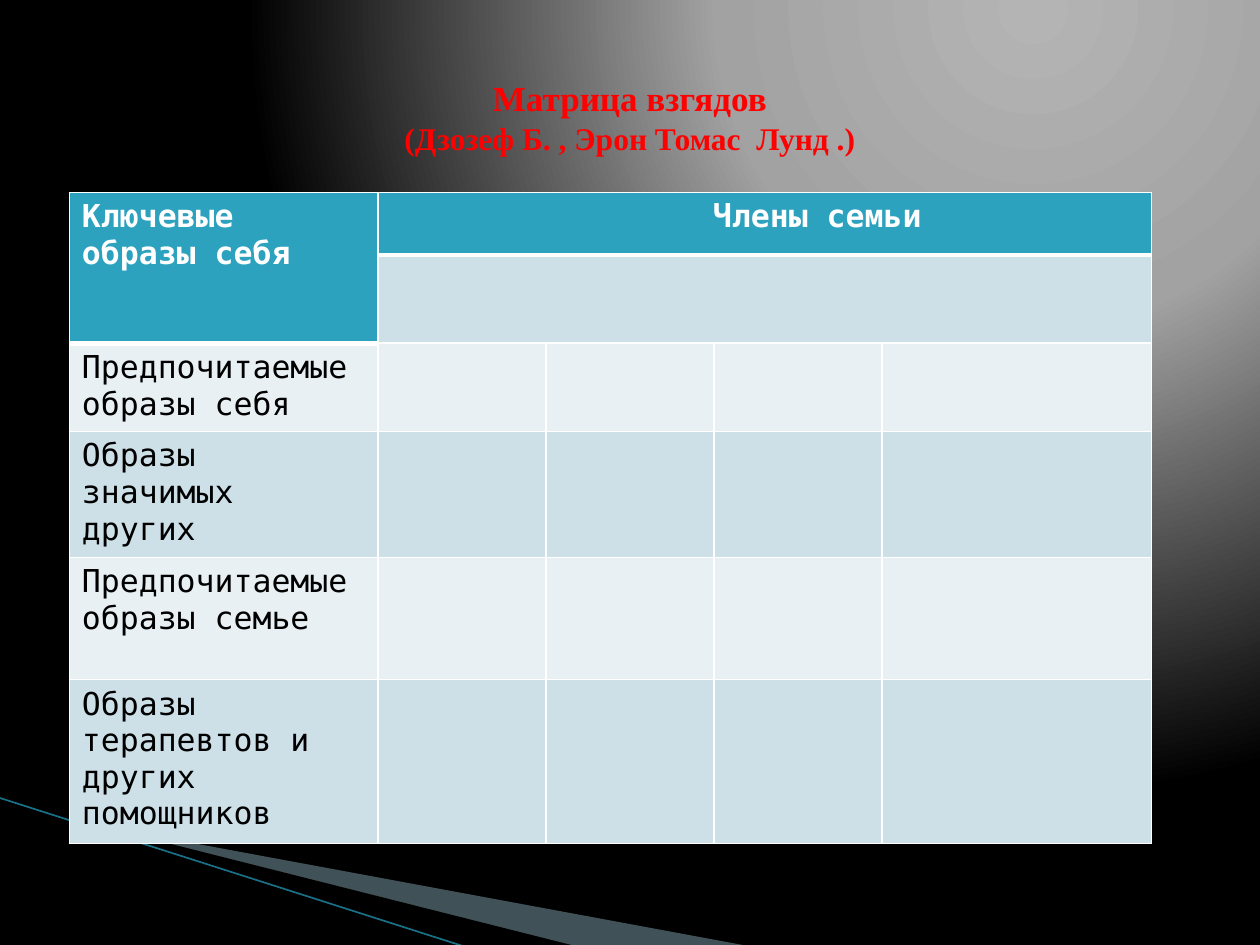
"""Builds a slide with a matrix of family members' views."""
from lxml import etree
from pptx import Presentation
from pptx import util as u
from pptx.dml import color
from pptx.enum import shapes, text
from pptx.oxml import parse_xml
from pptx.oxml.ns import nsdecls, qn

Pt = u.Pt
THEME = {
    "head": "2DA2BF", "dark": "CDE0E8", "pale": "E8F0F4", "title": "FF0000",
    "white": "FFFFFF", "black": "000000", "wedge": "A0CBDC", "line": "1A7087",
    "glow": [(0, "B4B4B4"), (40, "A2A2A2"), (100, "000000")],
    "serif": "Times New Roman", "mono": "DejaVu Sans Mono",
    "big": 20, "body": 18,
}
TITLE = ["Матрица взгядов", "(Дзозеф Б. , Эрон Томас  Лунд .)"]
HEADS = ["Ключевые образы себя", "Члены семьи"]
VIEWS = ["Предпочитаемые образы себя", "Образы значимых других",
         "Предпочитаемые образы семье", "Образы терапевтов и других помощников"]
COLS = [176.4, 96, 96, 96, 154]
ROWS = [35.7, 49.4, 49.2, 69.8, 69.8, 91]
WEDGES = [
    ("wedge", 40, [(39.6, 468.7), (428.4, 540.7), (328.3, 540.7), (39.6, 468)]),
    ("black", 100, [(38.2, 467.3), (329, 540.7), (267.8, 541.4), (38.9, 468)]),
]


def rgb(key):
    return color.RGBColor.from_string(THEME[key])


def style(run, face, size, tint, bold):
    font = run.font
    font.name, font.size, font.bold = THEME[face], Pt(THEME[size]), bold
    font.color.rgb = rgb(tint)


def backdrop(slide):
    slide.background.fill.solid()
    props = slide.background.fill._xPr
    stops = "".join(f'<a:gs pos="{pos * 1000}"><a:srgbClr val="{tint}"/></a:gs>'
                    for pos, tint in THEME["glow"])
    grad = parse_xml(
        f'<a:gradFill {nsdecls("a")} rotWithShape="1"><a:gsLst>{stops}</a:gsLst>'
        '<a:path path="circle"><a:fillToRect l="65000" t="0" r="0" b="98000"/>'
        '</a:path></a:gradFill>')
    props.replace(props.find(qn("a:solidFill")), grad)


def wedge(slide, tint, alpha, points):
    build = slide.shapes.build_freeform(*map(Pt, points[0]))
    build.add_line_segments([tuple(map(Pt, p)) for p in points[1:]])
    shape = build.convert_to_shape()
    shape.shadow.inherit = False
    shape.line.fill.background()
    shape.fill.solid()
    shape.fill.fore_color.rgb = rgb(tint)
    if alpha < 100:
        clr = shape._element.spPr.find(".//" + qn("a:srgbClr"))
        etree.SubElement(clr, qn("a:alpha")).set("val", str(alpha * 1000))


def stripe(slide):
    line = slide.shapes.add_connector(
        shapes.MSO_CONNECTOR.STRAIGHT, Pt(-0.7), Pt(455.8), Pt(267), Pt(541.4))
    line.line.color.rgb = rgb("line")
    line.line.width = Pt(0.95)
    etree.SubElement(line._element.spPr, qn("a:effectLst"))


def heading(slide):
    frame = slide.shapes.add_textbox(Pt(36), Pt(21.6), Pt(648), Pt(90)).text_frame
    frame.word_wrap = True
    frame.vertical_anchor = text.MSO_ANCHOR.MIDDLE
    frame.text = "\v".join(TITLE)
    para = frame.paragraphs[0]
    para.alignment = text.PP_ALIGN.CENTER
    for run, size in zip(para.runs, ("big", "body")):
        style(run, "serif", size, "title", True)


def border(cell, row, col):
    thick = {"T": (row, col) == (2, 0) or row == 1 and col > 0,
             "B": (row, col) == (1, 0) or row == 0}
    for side in "LRTB":
        width = Pt(3 if thick.get(side) else 1)
        cell._tc.get_or_add_tcPr().append(parse_xml(
            f'<a:ln{side} {nsdecls("a")} w="{width}"><a:solidFill>'
            f'<a:srgbClr val="{THEME["white"]}"/></a:solidFill></a:ln{side}>'))


def matrix(slide):
    table = slide.shapes.add_table(
        len(ROWS), len(COLS), Pt(39.6), Pt(110), Pt(sum(COLS)), Pt(sum(ROWS))).table
    table.first_row = table.horz_banding = False
    for col, width in zip(table.columns, COLS):
        col.width = Pt(width)
    for row, high in zip(table.rows, ROWS):
        row.height = Pt(high)
    words = {(0, 0): HEADS[0], (0, 1): HEADS[1]}
    words.update({(i, 0): view for i, view in enumerate(VIEWS, 2)})
    for r in range(len(ROWS)):
        for c in range(len(COLS)):
            cell = table.cell(r, c)
            head = r == 0 or (r, c) == (1, 0)
            border(cell, r, c)
            cell.fill.solid()
            cell.fill.fore_color.rgb = rgb("head" if head else "dark" if r % 2 else "pale")
            if (r, c) in words:
                cell.text_frame.text = words[r, c]
                style(cell.text_frame.paragraphs[0].runs[0], "mono", "body",
                      "white" if head else "black", head)
    table.cell(0, 0).merge(table.cell(1, 0))
    for r in (0, 1):
        table.cell(r, 1).merge(table.cell(r, len(COLS) - 1))
    table.cell(0, 1).margin_left = Pt(191.4)


def main():
    deck = Presentation()
    deck.slide_width, deck.slide_height = Pt(720), Pt(540)
    slide = deck.slides.add_slide(deck.slide_layouts[6])
    backdrop(slide)
    for item in WEDGES:
        wedge(slide, *item)
    stripe(slide)
    heading(slide)
    matrix(slide)
    deck.save("out.pptx")


if __name__ == "__main__":
    main()
